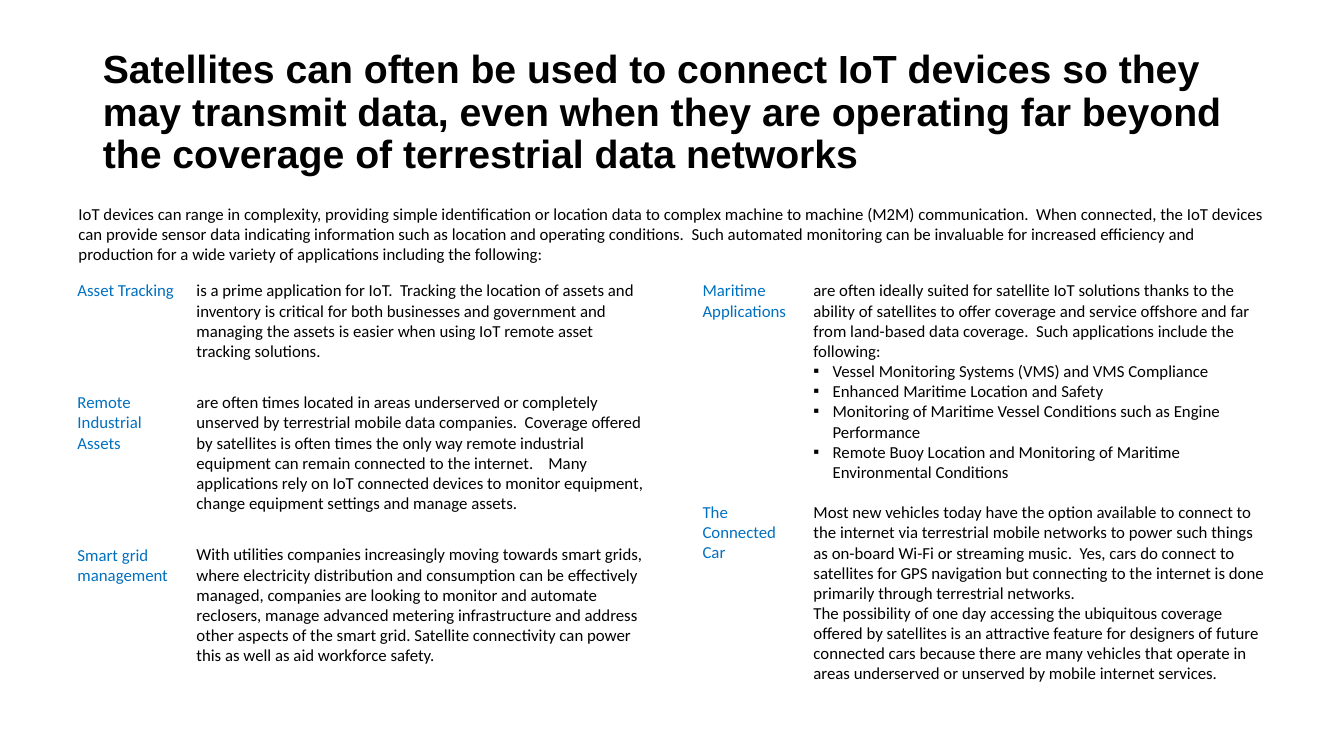
from lxml import etree
from pptx import Presentation
from pptx import util as u
from pptx.dml import color
from pptx.enum import shapes, text
from pptx.oxml import ns

COLOURS = {"body": "000000", "label": "0070C0"}
LABEL_INSET_RIGHT = 0.05
BULLET_INDENT = 0.19

TITLE = ("Satellites can often be used to connect IoT devices so they may transmit data, "
         "even when they are operating far beyond the coverage of terrestrial data networks")
INTRO = ("IoT devices can range in complexity, providing simple identification or location data "
         "to complex machine to machine (M2M) communication.  When connected, the IoT devices can "
         "provide sensor data indicating information such as location and operating conditions.  "
         "Such automated monitoring can be invaluable for increased efficiency and production for "
         "a wide variety of applications including the following:")

# Each column: label left, label width, body left, applications.
# Each application: top, label height, body height, label, paragraphs, bullets.
COLUMNS = [
    (0.67, 1.19, 1.85, [
        (2.73, 0.4, 0.96, "Asset Tracking", [
            "is a prime application for IoT.  Tracking the location of assets and inventory is "
            "critical for both businesses and government and managing the assets is easier when "
            "using IoT remote asset tracking solutions."], []),
        (3.84, 0.79, 1.37, "Remote Industrial Assets", [
            "are often times located in areas underserved or completely unserved by terrestrial "
            "mobile data companies.  Coverage offered by satellites is often times the only way "
            "remote industrial equipment can remain connected to the internet.    Many "
            "applications rely on IoT connected devices to monitor equipment, change equipment "
            "settings and manage assets."], []),
        (5.35, 0.79, 1.37, "Smart grid management", [
            "With utilities companies increasingly moving towards smart grids, where electricity "
            "distribution and consumption can be effectively managed, companies are looking to "
            "monitor and automate reclosers, manage advanced metering infrastructure and address "
            "other aspects of the smart grid. Satellite connectivity can power this as well as "
            "aid workforce safety."], []),
    ]),
    (6.87, 1.1, 7.97, [
        (2.73, 0.4, 2.09, "Maritime Applications", [
            "are often ideally suited for satellite IoT solutions thanks to the ability of "
            "satellites to offer coverage and service offshore and far from land-based data "
            "coverage.  Such applications include the following:"],
         ["Vessel Monitoring Systems (VMS) and VMS Compliance",
          "Enhanced Maritime Location and Safety",
          "Monitoring of Maritime Vessel Conditions such as Engine Performance",
          "Remote Buoy Location and Monitoring of Maritime Environmental Conditions"]),
        (4.93, 0.67, 1.91, "The Connected Car", [
            "Most new vehicles today have the option available to connect to the internet via "
            "terrestrial mobile networks to power such things as on-board Wi-Fi or streaming "
            "music.  Yes, cars do connect to satellites for GPS navigation but connecting to the "
            "internet is done primarily through terrestrial networks.",
            "The possibility of one day accessing the ubiquitous coverage offered by satellites "
            "is an attractive feature for designers of future connected cars because there are "
            "many vehicles that operate in areas underserved or unserved by mobile internet "
            "services."], []),
    ]),
]
BODY_WIDTH = 4.7


class SlideBuilder:
    def __init__(self, slide):
        self.slide = slide
        self.body_font = "Calibri"
        self.body_size = 12

    def add_run(self, paragraph, words, colour="body", font=None, size=None, bold=False):
        paragraph.alignment = text.PP_ALIGN.LEFT
        run = paragraph.add_run()
        run.text = words
        run.font.name = font or self.body_font
        run.font.size = u.Pt(size or self.body_size)
        run.font.bold = bold
        run.font.color.rgb = color.RGBColor.from_string(COLOURS[colour])

    def title(self, words, left, top, width, height):
        heading = self.slide.shapes.title
        heading.left, heading.top = u.Inches(left), u.Inches(top)
        heading.width, heading.height = u.Inches(width), u.Inches(height)
        frame = heading.text_frame
        frame.word_wrap = True
        frame.auto_size = text.MSO_AUTO_SIZE.NONE
        frame.vertical_anchor = text.MSO_ANCHOR.MIDDLE
        paragraph = frame.paragraphs[0]
        paragraph.line_spacing = 0.9
        self.add_run(paragraph, words, font="Arial", size=28, bold=True)

    def label(self, words, left, top, width, height):
        """Place a heading in an unfilled pentagon arrow."""
        tag = self.slide.shapes.add_shape(
            shapes.MSO_SHAPE.PENTAGON,
            u.Inches(left), u.Inches(top), u.Inches(width), u.Inches(height))
        tag.adjustments[0] = 0.086
        tag.shadow.inherit = False
        tag.fill.background()
        tag.line.fill.background()
        frame = tag.text_frame
        frame.word_wrap = True
        frame.vertical_anchor = text.MSO_ANCHOR.TOP
        frame.margin_right = u.Inches(LABEL_INSET_RIGHT)
        self.add_run(frame.paragraphs[0], words, "label")

    def body(self, paragraphs, left, top, width, height, bullets=()):
        box = self.slide.shapes.add_textbox(
            u.Inches(left), u.Inches(top), u.Inches(width), u.Inches(height))
        frame = box.text_frame
        frame.word_wrap = True
        for index, words in enumerate([*paragraphs, *bullets]):
            paragraph = frame.paragraphs[0] if index == 0 else frame.add_paragraph()
            if index >= len(paragraphs):
                self.add_bullet(paragraph)
            self.add_run(paragraph, words)

    def add_bullet(self, paragraph):
        properties = paragraph._p.get_or_add_pPr()
        indent = u.Inches(BULLET_INDENT)
        properties.set("marL", str(indent))
        properties.set("indent", str(-indent))
        etree.SubElement(properties, ns.qn("a:buFont")).set("typeface", "Arial")
        etree.SubElement(properties, ns.qn("a:buChar")).set("char", "▪")


def main():
    deck = Presentation()
    deck.slide_width, deck.slide_height = u.Inches(13.33), u.Inches(7.5)
    builder = SlideBuilder(deck.slides.add_slide(deck.slide_layouts.get_by_name("Title Only")))
    builder.title(TITLE, 0.92, 0.4, 11.5, 1.45)
    builder.body([INTRO], 0.68, 1.97, 11.99, 0.79)
    for label_left, label_width, body_left, applications in COLUMNS:
        for top, label_height, body_height, label, paragraphs, bullets in applications:
            builder.label(label, label_left, top, label_width, label_height)
            builder.body(paragraphs, body_left, top, BODY_WIDTH, body_height, bullets)
    deck.save("out.pptx")


if __name__ == "__main__":
    main()
